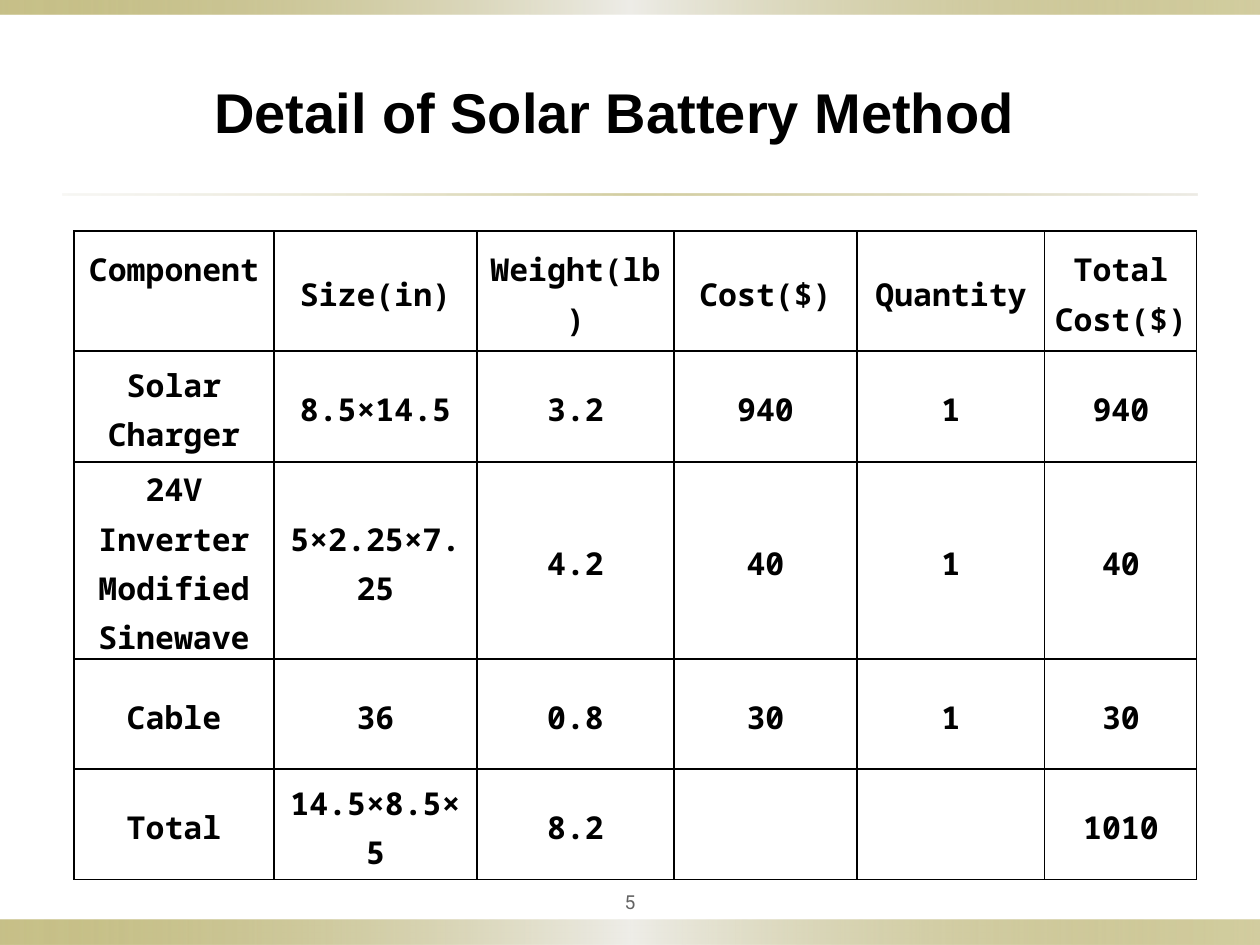
from lxml.etree import SubElement as Sub
from pptx import Presentation
from pptx.dml.color import RGBColor as RGB
from pptx.enum.shapes import MSO_SHAPE as Shape
from pptx.enum.text import MSO_ANCHOR as Anchor, MSO_AUTO_SIZE as Auto, PP_ALIGN as Align
from pptx.oxml.ns import qn
from pptx.util import Emu, Pt

SCALE = 914400 / 126
HUES = {"gold": "918415", "pale": "EEEDE8", "sand": "DCD9CC", "ink": "000000", "gray": "636363"}
BAND = [(0, "gold", 50), (50, "pale", 100), (100, "gold", 40)]
RULE = [(0, "sand", 20), (50, "gold", 40), (100, "sand", 50)]
COLS = [200, 203, 197, 183, 188, 152]
ROWS = [120, 111, 197, 110, 111]
LINE = 49
DATA = [
    ["Component", "Size(in)", "Weight(lb)", "Cost($)", "Quantity", "Total Cost($)"],
    ["Solar Charger", "8.5×14.5", "3.2", "940", "1", "940"],
    ["24V Inverter Modified Sinewave", "5×2.25×7.25", "4.2", "40", "1", "40"],
    ["Cable", "36", "0.8", "30", "1", "30"],
    ["Total", "14.5×8.5×5", "8.2", "", "", "1010"],
]


def px(n):
    return Emu(round(n * SCALE))


def style(para, face, size, hue, bold=False):
    para.alignment = Align.CENTER
    font = para.font
    font.name, font.size, font.bold = face, Pt(size), bold
    font.color.rgb = RGB.from_string(HUES[hue])


def add_bar(slide, box, stops):
    bar = slide.shapes.add_shape(Shape.RECTANGLE, *map(px, box))
    bar.shadow.inherit = False
    bar.line.fill.background()
    bar.fill.gradient()
    bar.fill.gradient_angle = 0
    ramp = bar._element.spPr.find(qn("a:gradFill")).find(qn("a:gsLst"))
    for old in list(ramp):
        ramp.remove(old)
    for pos, hue, alpha in stops:
        stop = Sub(ramp, qn("a:gs"), pos=str(pos * 1000))
        tint = Sub(stop, qn("a:srgbClr"), val=HUES[hue])
        Sub(tint, qn("a:alpha"), val=str(alpha * 1000))


def set_title(slide, text, box):
    title = slide.shapes.title
    title.left, title.top, title.width, title.height = map(px, box)
    frame = title.text_frame
    frame.text = text
    frame.auto_size = Auto.SHAPE_TO_FIT_TEXT
    frame.vertical_anchor = Anchor.TOP
    style(frame.paragraphs[0], "Arial", 32, "ink", True)


def add_num(slide, text, box):
    frame = slide.shapes.add_textbox(*map(px, box)).text_frame
    frame.word_wrap = True
    frame.vertical_anchor = Anchor.MIDDLE
    frame.margin_left = frame.margin_right = px(6)
    frame.margin_top = frame.margin_bottom = px(6)
    frame.text = text
    style(frame.paragraphs[0], "Roboto", 11, "gray")


def add_edges(cell):
    props = cell._tc.get_or_add_tcPr()
    for side in ("lnL", "lnR", "lnT", "lnB"):
        edge = Sub(props, qn(f"a:{side}"), w=str(Pt(0.75)))
        fill = Sub(edge, qn("a:solidFill"))
        Sub(fill, qn("a:srgbClr"), val=HUES["ink"])


def fill_cell(cell, text):
    add_edges(cell)
    cell.fill.background()
    cell.vertical_anchor = Anchor.MIDDLE
    cell.margin_left = cell.margin_right = px(9)
    cell.margin_top = cell.margin_bottom = 0
    cell.text = text
    para = cell.text_frame.paragraphs[0]
    para.line_spacing = 1.15
    style(para, "Noto Sans Mono", 18, "ink", True)


def add_grid(slide, left, top):
    box = map(px, (left, top, sum(COLS), sum(ROWS)))
    grid = slide.shapes.add_table(len(ROWS), len(COLS), *box).table
    grid.first_row = grid.horz_banding = False
    for col, wide in zip(grid.columns, COLS):
        col.width = px(wide)
    for row, tall, texts in zip(grid.rows, ROWS, DATA):
        row.height = px(tall)
        for cell, text in zip(row.cells, texts):
            fill_cell(cell, text)
    grid.cell(0, 0).margin_bottom = px(LINE)


def main():
    deck = Presentation()
    deck.slide_width, deck.slide_height = px(1260), px(945)
    slide = deck.slides.add_slide(deck.slide_layouts[5])
    add_bar(slide, (0, 920, 1260, 25), BAND)
    add_bar(slide, (0, 0, 1260, 15), BAND)
    add_bar(slide, (63, 194, 1134, 2), RULE)
    add_grid(slide, 74, 231)
    add_num(slide, "5", (567, 882, 126, 39))
    set_title(slide, "Detail of Solar Battery Method", (147, 71, 935, 81))
    deck.save("out.pptx")


if __name__ == "__main__":
    main()
